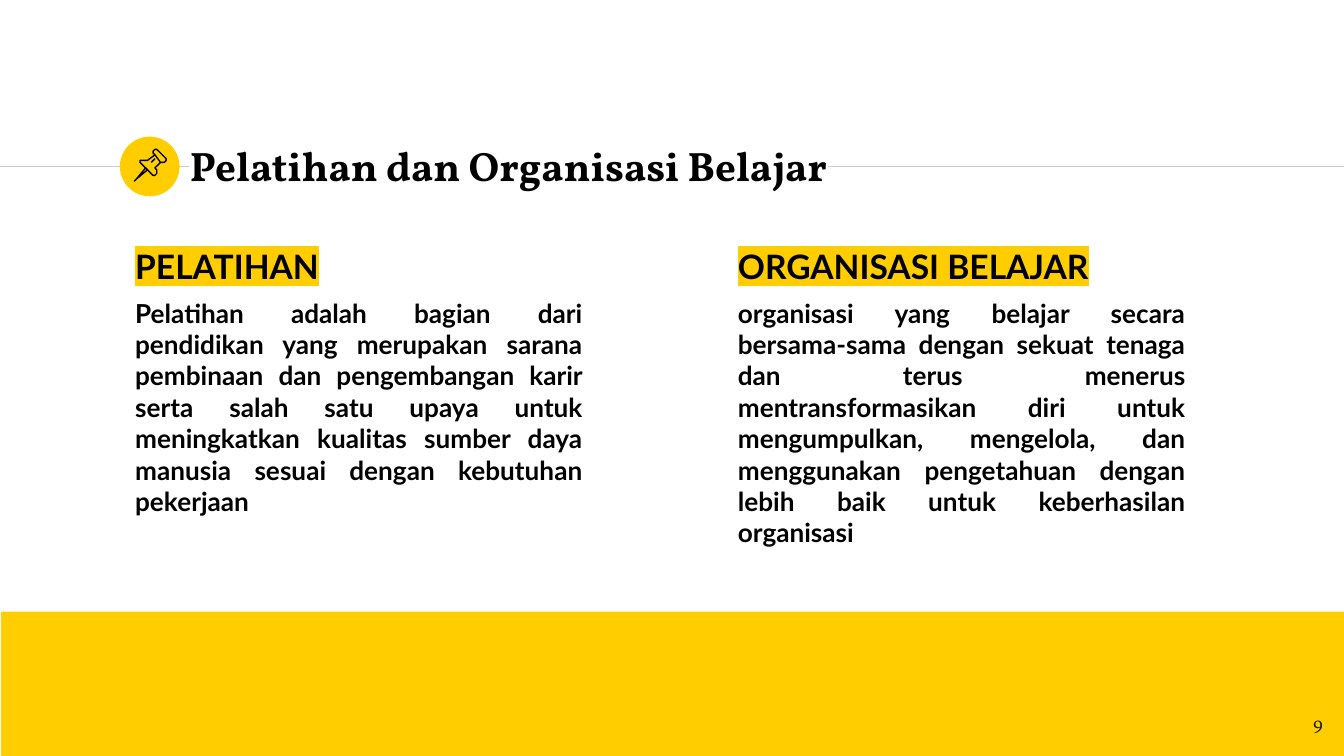
"""Build a slide that sets training beside the learning organisation."""
from lxml import etree
from pptx import Presentation
from pptx import util as u
from pptx.dml.color import RGBColor
from pptx.enum import shapes, text
from pptx.oxml.ns import qn

YELLOW, BLACK, GREY, INK = "FFCD00", "000000", "CCCCCC", "1D1D1B"
TITLE = "Pelatihan dan Organisasi Belajar"
COLUMNS = [
    ("PELATIHAN",
     "Pelatihan adalah bagian dari pendidikan yang merupakan sarana pembinaan dan "
     "pengembangan karir serta salah satu upaya untuk meningkatkan kualitas sumber "
     "daya manusia sesuai dengan kebutuhan pekerjaan"),
    ("ORGANISASI BELAJAR",
     "organisasi yang belajar secara bersama-sama dengan sekuat tenaga dan terus "
     "menerus mentransformasikan diri untuk mengumpulkan, mengelola, dan menggunakan "
     "pengetahuan dengan lebih baik untuk keberhasilan organisasi"),
]
COLUMN_LEFT, COLUMN_STEP = 65.3, 322.9
RULE_Y = 89.3
RULES = [(0, 101), (443.5, 720)]
PIN_PARTS = [
    ([(77.8, 90), (72.7, 96.5), (72, 97.2), (73.4, 96.5), (79.2, 91.4)], True),
    ([(82.8, 82.8), (86.4, 87.1), (87.8, 87.1), (88.9, 86.4), (89.4, 85.7),
      (89.2, 85.2), (83.8, 80.5), (83.2, 80.4), (82.2, 81.2), (82.1, 82.2)], True),
    ([(82.8, 82.8), (79.2, 85.7), (77.8, 85.7), (76.3, 85.5), (75, 86.2),
      (74.8, 87), (82, 94.2), (82.8, 94.2), (83.5, 93.2), (83.5, 91),
      (83.4, 90), (86.4, 87.1)], False),
    ([(80.6, 87.1), (82.8, 85)], False),
]


def color(value):
    return RGBColor.from_string(value)


def points(*values):
    return [u.Pt(value) for value in values]


def write(paragraph, content, font="Lato", size=14, fill=BLACK, bold=True,
          align=text.PP_ALIGN.LEFT, before=0, highlight=None):
    paragraph.alignment = align
    paragraph.space_before = u.Pt(before)
    run = paragraph.add_run()
    run.text = content
    run.font.name, run.font.size, run.font.bold = font, u.Pt(size), bold
    run.font.color.rgb = color(fill)
    if highlight:
        mark = etree.Element(qn("a:highlight"))
        etree.SubElement(mark, qn("a:srgbClr")).set("val", highlight)
        run.font._element.find(qn("a:solidFill")).addnext(mark)


def format_frame(shape, anchor=text.MSO_ANCHOR.TOP):
    frame = shape.text_frame
    frame.word_wrap = True
    frame.auto_size = text.MSO_AUTO_SIZE.NONE
    frame.vertical_anchor = anchor
    frame.margin_left = frame.margin_right = u.Pt(7.2)
    frame.margin_top = frame.margin_bottom = u.Pt(7.2)
    return frame


def add_filled(slide, preset, *box):
    shape = slide.shapes.add_shape(preset, *points(*box))
    shape.shadow.inherit = False
    shape.fill.solid()
    shape.fill.fore_color.rgb = color(YELLOW)
    shape.line.fill.background()


def add_rule(slide, start, end):
    rule = slide.shapes.add_connector(
        shapes.MSO_CONNECTOR.STRAIGHT, *points(start, RULE_Y, end, RULE_Y))
    rule.line.color.rgb, rule.line.width = color(GREY), u.Pt(0.75)
    etree.SubElement(rule._element.spPr, qn("a:effectLst"))


def add_pin_part(slide, outline, closed):
    builder = slide.shapes.build_freeform(*outline[0], scale=u.Pt(1))
    builder.add_line_segments(outline[1:], close=closed)
    part = builder.convert_to_shape()
    part.shadow.inherit = False
    part.fill.background()
    part.line.color.rgb, part.line.width = color(BLACK), u.Pt(0.75)


def main():
    presentation = Presentation()
    presentation.slide_width, presentation.slide_height = points(720, 405)
    slide = presentation.slides.add_slide(presentation.slide_layouts[5])

    for start, end in RULES:
        add_rule(slide, start, end)
    add_filled(slide, shapes.MSO_SHAPE.OVAL, 64.2, 73.2, 32, 32)
    add_filled(slide, shapes.MSO_SHAPE.RECTANGLE, 0.6, 327.7, 720, 77.3)

    title = slide.shapes.title
    title.left, title.top, title.width, title.height = points(94.5, 71, 397.5, 34.5)
    write(format_frame(title, text.MSO_ANCHOR.MIDDLE).paragraphs[0], TITLE,
          font="Vollkorn", size=22)

    for outline, closed in PIN_PARTS:
        add_pin_part(slide, outline, closed)

    for index, (heading, body) in enumerate(COLUMNS):
        left = COLUMN_LEFT + index * COLUMN_STEP
        frame = format_frame(slide.shapes.add_textbox(*points(left, 124.3, 254, 173.5)))
        write(frame.paragraphs[0], heading, size=18, highlight=YELLOW)
        write(frame.add_paragraph(), body, align=text.PP_ALIGN.JUSTIFY, before=6)

    number = format_frame(slide.shapes.add_textbox(*points(672.5, 374, 43.2, 31)))
    write(number.paragraphs[0], "9", font="Vollkorn", size=10, fill=INK, bold=False,
          align=text.PP_ALIGN.RIGHT)
    presentation.save("out.pptx")


if __name__ == "__main__":
    main()
